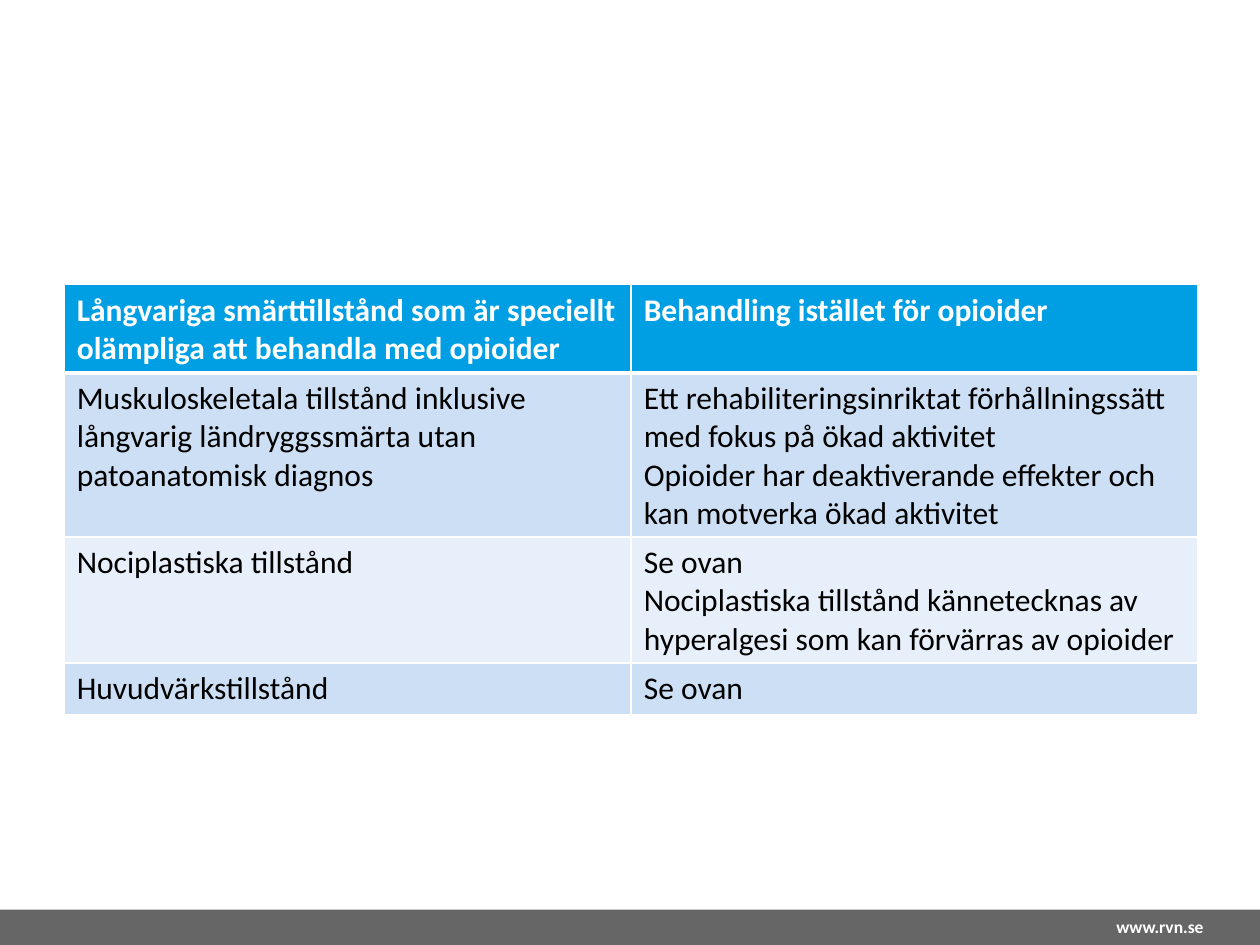
from lxml.etree import SubElement
from pptx import Presentation
from pptx.dml.color import RGBColor
from pptx.enum.shapes import MSO_SHAPE
from pptx.enum.text import MSO_ANCHOR, PP_ALIGN
from pptx.oxml.ns import qn
from pptx.util import Inches, Pt

WHITE = RGBColor(0xFF, 0xFF, 0xFF)
BLACK = RGBColor(0, 0, 0)
GREY = RGBColor(0x66, 0x66, 0x66)
HEADER_BLUE = RGBColor(0x00, 0x9F, 0xE3)
BAND_DARK = RGBColor(0xCC, 0xDF, 0xF4)
BAND_LIGHT = RGBColor(0xE7, 0xF0, 0xFA)

ROWS = [
    ("Långvariga smärttillstånd som är speciellt olämpliga att behandla med opioider",
     "Behandling istället för opioider"),
    ("Muskuloskeletala tillstånd inklusive långvarig ländryggssmärta utan "
     "patoanatomisk diagnos",
     "Ett rehabiliteringsinriktat förhållningssätt med fokus på ökad aktivitet\n"
     "Opioider har deaktiverande effekter och kan motverka ökad aktivitet"),
    ("Nociplastiska tillstånd",
     "Se ovan\n"
     "Nociplastiska tillstånd kännetecknas av hyperalgesi som kan förvärras av opioider"),
    ("Huvudvärkstillstånd", "Se ovan"),
]


def style_paragraph(p, size, color, bold):
    p.font.name = "Calibri"
    p.font.size = Pt(size)
    p.font.bold = bold
    p.font.color.rgb = color


def add_footer(slide):
    bar = slide.shapes.add_shape(MSO_SHAPE.RECTANGLE, 0, Inches(7.22),
                                 Inches(10), Inches(0.28))
    bar.shadow.inherit = False
    bar.fill.solid()
    bar.fill.fore_color.rgb = GREY
    bar.line.fill.background()

    box = slide.shapes.add_textbox(Inches(8.7), Inches(7.22), Inches(0.95), Inches(0.27))
    tf = box.text_frame
    tf.word_wrap = True
    tf.vertical_anchor = MSO_ANCHOR.MIDDLE
    p = tf.paragraphs[0]
    p.text = "www.rvn.se"
    p.alignment = PP_ALIGN.RIGHT
    style_paragraph(p, 10, WHITE, True)


def set_borders(cell, widths):
    """Draw white borders; widths maps a side (L, R, T, B) to points.

    Must run before the cell is filled, as borders precede the fill in the XML.
    """
    tc_pr = cell._tc.get_or_add_tcPr()
    for side, width in widths.items():
        ln = SubElement(tc_pr, qn(f"a:ln{side}"), w=str(Pt(width)))
        fill = SubElement(ln, qn("a:solidFill"))
        SubElement(fill, qn("a:srgbClr"), val=str(WHITE))


def fill_cell(cell, text, row):
    is_header = row == 0
    set_borders(cell, {"L": 1, "R": 1, "T": 3 if row == 1 else 1,
                       "B": 3 if is_header else 1})
    cell.fill.solid()
    band = BAND_DARK if row % 2 else BAND_LIGHT
    cell.fill.fore_color.rgb = HEADER_BLUE if is_header else band
    cell.text = text
    for p in cell.text_frame.paragraphs:
        style_paragraph(p, 18, WHITE if is_header else BLACK, is_header)


def add_treatment_table(slide):
    height = Inches(3.41)
    frame = slide.shapes.add_table(len(ROWS), 2, Inches(0.51), Inches(2.26),
                                   Inches(9), height)
    table = frame.table
    for i, texts in enumerate(ROWS):
        table.rows[i].height = Inches(0.41)  # rows grow to fit their text
        for j, text in enumerate(texts):
            fill_cell(table.cell(i, j), text, i)
    frame.height = height


def main():
    prs = Presentation()
    prs.slide_width, prs.slide_height = Inches(10), Inches(7.5)
    slide = prs.slides.add_slide(prs.slide_layouts[6])
    add_footer(slide)
    add_treatment_table(slide)
    prs.save("out.pptx")


if __name__ == "__main__":
    main()
